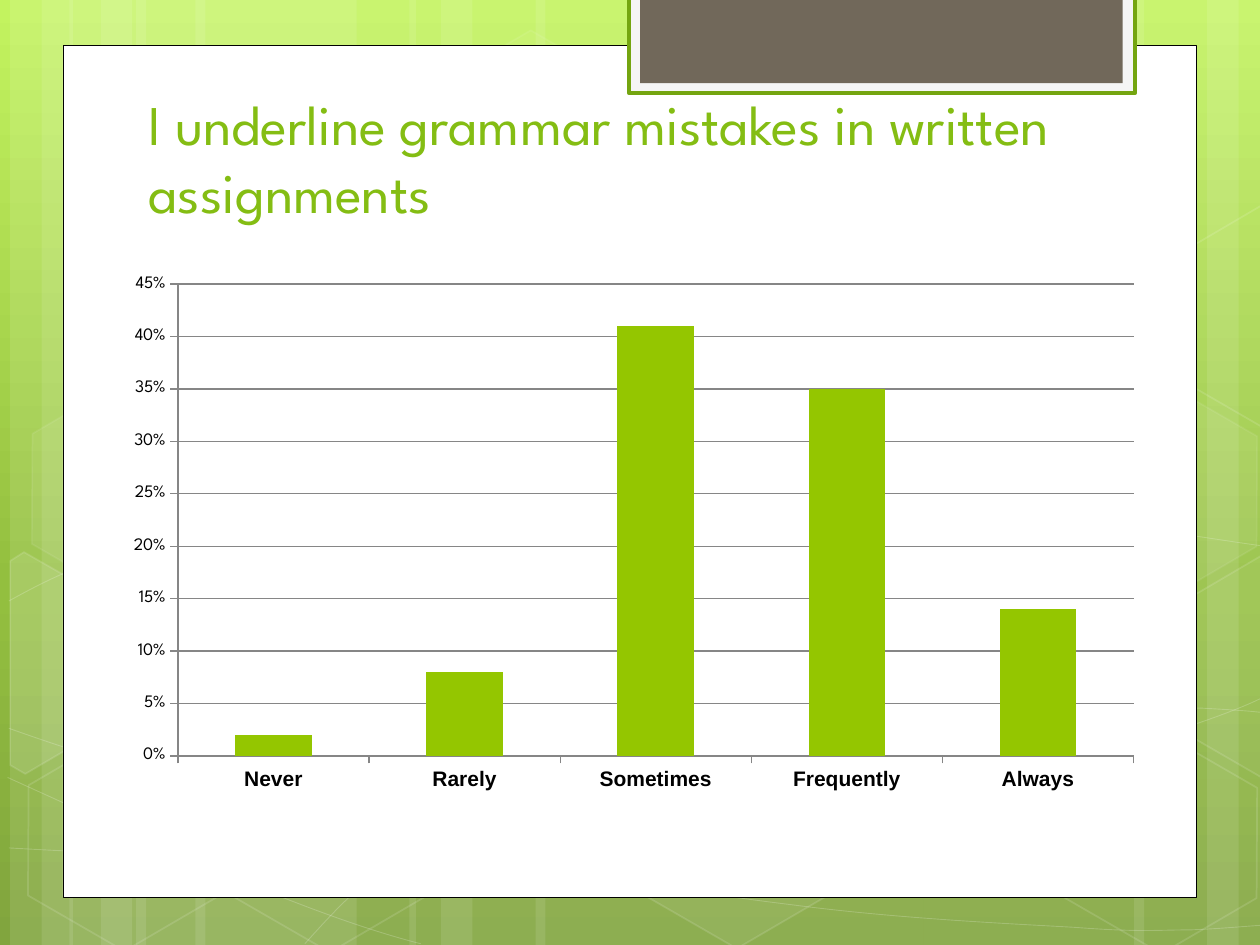
import copy
import math
from lxml import etree
from pptx import Presentation
from pptx import util as u
from pptx.chart import data as chart_data
from pptx.dml import color as dml
from pptx.enum import chart as chart_enum, shapes, text
from pptx.oxml import ns, parse_xml


def rgb(value):
    return dml.RGBColor.from_string(value)


def paint(shape, fill=None, fill_alpha=100, line=None, line_alpha=100, width=1):
    shape.shadow.inherit = False
    for target, value, alpha in ((shape.fill, fill, fill_alpha), (shape.line.fill, line, line_alpha)):
        if value is None:
            target.background()
            continue
        target.solid()
        target.fore_color.rgb = rgb(value)
        if alpha < 100:
            parent = shape.element.spPr if target is shape.fill else shape.element.spPr.find(ns.qn("a:ln"))
            source = parent.find(ns.qn("a:solidFill"))[0]
            source.append(parse_xml(f'<a:alpha {ns.nsdecls("a")} val="{alpha * 1000}"/>'))
    if line:
        shape.line.width = u.Pt(width)


presentation = Presentation()
presentation.slide_width, presentation.slide_height = u.Inches(10), u.Inches(7.5)
slide = presentation.slides.add_slide(presentation.slide_layouts[6])

background = slide.background.fill
background.gradient()
background.gradient_angle = 270
stop_list = slide.element.find(".//" + ns.qn("a:gsLst"))
stop_list.append(copy.deepcopy(stop_list[-1]))
for stop, (position, value) in zip(background.gradient_stops, ((0, "C3F35F"), (0.62, "93BF3F"), (1, "81A53E"))):
    stop.position = position
    stop.color.rgb = rgb(value)

stripes = [(1.08, 1.75, 0), (0.08, 0.5, 0), (0.33, 0.83, 0), (1.55, 1.75, 0), (0.55, 0.5, 0), (0.8, 0.83, 0),
           (7.33, 1.75, 180), (9.58, 0.5, 180), (9, 0.83, 180), (4.25, 3.08, 0), (3.25, 0.5, 0), (3.5, 0.83, 0)]
for left, width, rotation in stripes:
    stripe = slide.shapes.add_shape(shapes.MSO_SHAPE.RECTANGLE, u.Inches(left), 0, u.Inches(width), u.Inches(7.5))
    stripe.rotation = rotation
    paint(stripe, "FFFFFF", 10)

curves = [
    [(0.07, 6.73), (0.61, 6.76), (1.15, 6.79), (1.9, 6.78), (2.65, 6.77), (3.58, 6.75), (4.58, 6.65),
     (5.58, 6.55), (7, 6.36), (7.92, 6.17), (8.83, 5.98), (9.77, 5.68), (10.07, 5.51)],
    [(0.07, 4.77), (0.36, 4.61), (0.65, 4.46), (1.21, 4.31), (1.78, 4.16), (2.59, 3.94), (3.47, 3.87),
     (4.36, 3.8), (5.44, 3.79), (6.54, 3.87), (7.64, 3.95), (9.47, 4.26), (10.07, 4.34)],
    [(0.06, 6.17), (1.27, 6.72), (2.47, 7.27), (3.34, 7.49)],
    [(0.07, 5.78), (0.38, 5.89), (0.7, 6), (1.28, 6.16), (1.86, 6.31), (2.73, 6.56), (3.57, 6.73),
     (4.4, 6.9), (5.45, 7.08), (6.28, 7.18), (7.11, 7.29), (8, 7.33), (8.53, 7.36),
     (9.05, 7.4), (9.19, 7.38), (9.45, 7.38), (9.71, 7.37), (9.89, 7.35), (10.07, 7.34)],
    [(2.42, 7.49), (2.6, 7.29), (2.78, 7.09), (3.02, 6.91), (3.26, 6.73), (3.6, 6.53), (3.88, 6.39),
     (4.16, 6.25), (4.33, 6.19), (4.7, 6.09), (5.06, 5.99), (5.73, 5.85), (6.08, 5.78),
     (6.44, 5.71), (6.49, 5.71), (6.8, 5.69), (7.11, 5.66), (7.6, 5.63), (7.94, 5.62),
     (8.29, 5.61), (8.86, 5.62), (8.86, 5.62), (8.86, 5.62), (9.53, 5.62), (9.53, 5.62),
     (9.71, 5.63), (9.88, 5.64), (9.97, 5.65), (10.06, 5.66), (10.03, 5.65), (10.06, 5.66)],
]
for curve in curves:
    points = [(u.Inches(x), u.Inches(y)) for x, y in curve]
    builder = slide.shapes.build_freeform(*points[0])
    builder.add_line_segments(points[1:], close=False)
    shape = builder.convert_to_shape()
    outline = shape.element.find(".//" + ns.qn("a:path"))
    segments = outline.findall(ns.qn("a:lnTo"))
    for first in range(0, len(segments), 3):
        bezier = etree.SubElement(outline, ns.qn("a:cubicBezTo"))
        for segment in segments[first:first + 3]:
            bezier.append(segment[0])
            outline.remove(segment)
    paint(shape, line="FFFFFF", line_alpha=20, width=0.5)

hexagons = [(3.34, 0.36, 4, 8), (4.97, 5.89, 6, 12), (0.11, 5.91, 0, 12), (0.14, 3.12, 7, 8), (1.74, 5.92, 0, 12),
            (7.53, 4.53, 10, 12), (8.34, 5.93, 0, 12), (8.34, 3.14, 7, 8)]
for left, top, fill_alpha, line_alpha in hexagons:
    hexagon = slide.shapes.add_shape(
        shapes.MSO_SHAPE.HEXAGON, u.Inches(left), u.Inches(top), u.Inches(1.75), u.Inches(1.52))
    hexagon.adjustments[0] = 0.285
    hexagon.rotation = 30
    paint(hexagon, "FFFFFF" if fill_alpha else None, fill_alpha, "FFFFFF", line_alpha)

cut_hexagons = [
    ((0.36, 5.35), [(0.08, 4.45), (0.19, 4.38), (0.96, 4.82), (0.95, 5.7), (0.2, 6.14), (0.08, 6.07)], 10),
    ((9.85, 5.2), [(9.26, 4.85), (10.01, 4.41), (10.09, 4.46), (10.09, 6.13), (10.02, 6.17), (9.26, 5.73)], 4),
    ((9.85, 2.41), [(9.26, 2.07), (10.01, 1.63), (10.1, 1.68), (10.09, 3.35), (10.02, 3.39), (9.26, 2.95)], 0),
]
cosine, sine = math.cos(math.radians(30)), math.sin(math.radians(30))
for (center_x, center_y), corners, fill_alpha in cut_hexagons:
    offsets = [(x - center_x, y - center_y) for x, y in corners]
    points = [(u.Inches(center_x + x * cosine + y * sine), u.Inches(center_y + y * cosine - x * sine))
              for x, y in offsets]
    builder = slide.shapes.build_freeform(*points[0])
    builder.add_line_segments(points[1:], close=True)
    cut_hexagon = builder.convert_to_shape()
    cut_hexagon.rotation = 30
    paint(cut_hexagon, "FFFFFF" if fill_alpha else None, fill_alpha, "FFFFFF", 12)

panels = [((0.5, 0.36, 9, 6.76), "FFFFFF", "000000", 0.5),
          ((4.99, -0.02, 4.02, 0.76), "F5F5F5", "74A510", 2),
          ((5.08, -0.02, 3.83, 0.68), "71685A", None, 0)]
for box, fill, line, width in panels:
    panel = slide.shapes.add_shape(shapes.MSO_SHAPE.RECTANGLE, *map(u.Inches, box))
    paint(panel, fill, line=line, width=width)

title = slide.shapes.add_textbox(*map(u.Inches, (1.08, 0.75, 7.83, 1.08)))
title.text_frame.word_wrap = True
title.text_frame.vertical_anchor = text.MSO_ANCHOR.BOTTOM
run = title.text_frame.paragraphs[0].add_run()
run.text = "I underline grammar mistakes in written assignments"

answers = chart_data.CategoryChartData(number_format="0%")
answers.categories = ["Never", "Rarely", "Sometimes", "Frequently", "Always"]
answers.add_series("Series 1", (0.02, 0.08, 0.41, 0.35, 0.14))
chart = slide.shapes.add_chart(
    chart_enum.XL_CHART_TYPE.COLUMN_CLUSTERED, *map(u.Inches, (0.67, 1.67, 8.83, 5)), answers).chart
chart.has_title = chart.has_legend = False
plot = chart.plots[0]
plot.gap_width = 150
plot.vary_by_categories = False
bars = plot.series[0].format.fill
bars.solid()
bars.fore_color.rgb = rgb("94C600")

value_axis, category_axis = chart.value_axis, chart.category_axis
for name, value in {"minimum_scale": 0, "maximum_scale": 0.45, "major_unit": 0.05,
                    "has_major_gridlines": True}.items():
    setattr(value_axis, name, value)
value_axis.tick_labels.number_format = "0%"
value_axis.tick_labels.number_format_is_linked = False
for axis in (value_axis, category_axis):
    axis.major_tick_mark = chart_enum.XL_TICK_MARK.OUTSIDE
for lined in (value_axis, category_axis, value_axis.major_gridlines):
    lined.format.line.color.rgb = rgb("868686")
    lined.format.line.width = u.Pt(0.75)

fonts = [(run.font, {"name": "League Spartan", "size": u.Pt(32)}, "84BD13"),
         (chart.font, {"name": "League Spartan", "size": u.Pt(10)}, "000000"),
         (category_axis.tick_labels.font, {"name": "Arial", "size": u.Pt(12), "bold": True}, "000000")]
for font, values, value_color in fonts:
    for name, value in values.items():
        setattr(font, name, value)
    font.color.rgb = rgb(value_color)

plot_area = chart.element.find(".//" + ns.qn("c:plotArea"))
for old_layout in plot_area.findall(ns.qn("c:layout")):
    plot_area.remove(old_layout)
frame = "".join(f'<c:{name} val="{value}"/>' for name, value in (
    ("layoutTarget", "inner"), ("xMode", "edge"), ("yMode", "edge"),
    ("x", 0.084), ("y", 0.117), ("w", 0.859), ("h", 0.749)))
plot_area.insert(0, parse_xml(
    f'<c:layout {ns.nsdecls("c")}><c:manualLayout>{frame}</c:manualLayout></c:layout>'))

presentation.save("out.pptx")
